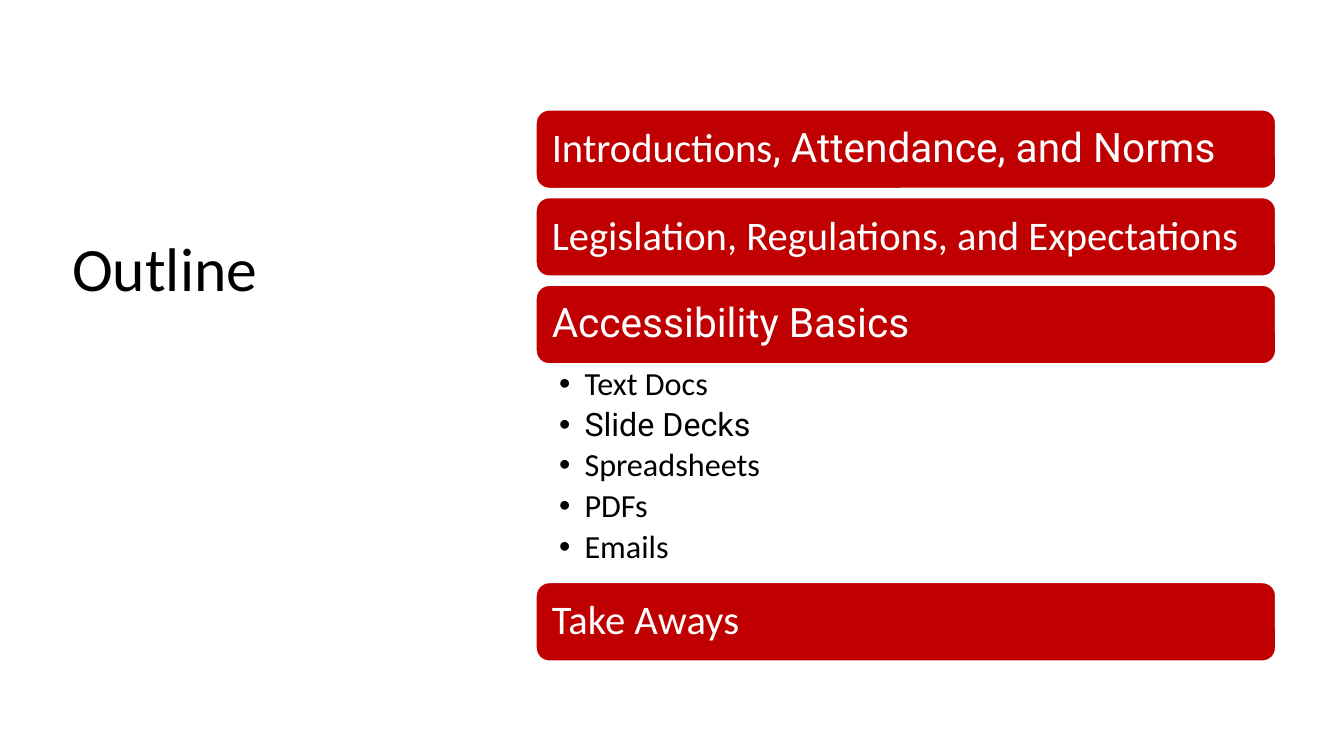
"""Build the workshop outline slide with red topic bars and a bulleted list."""
from lxml import etree
from pptx import Presentation
from pptx.dml.color import RGBColor
from pptx.enum.shapes import MSO_SHAPE
from pptx.enum.text import MSO_ANCHOR, MSO_AUTO_SIZE, PP_ALIGN
from pptx.oxml.ns import qn
from pptx.util import Cm, Pt

ROUNDED = MSO_SHAPE.ROUNDED_RECTANGLE
MIDDLE, TOP = MSO_ANCHOR.MIDDLE, MSO_ANCHOR.TOP
NO_FIT = MSO_AUTO_SIZE.NONE
LEFT = PP_ALIGN.LEFT
RED = RGBColor(0xC0, 0x00, 0x00)
WHITE = RGBColor(0xFF, 0xFF, 0xFF)
BLACK = RGBColor(0x00, 0x00, 0x00)

BAR_LEFT, BAR_TOP, BAR_WIDTH, BAR_HEIGHT = 13.51, 2.77, 18.64, 1.98
BAR_STEP = 2.21
LIST_HEIGHT = 5.51
LIST_TOP = BAR_TOP + 2 * BAR_STEP + BAR_HEIGHT


def write(sp, paragraphs, size, color, anchor=MIDDLE, margins=(0.25, 0.13), after=0, bullet=False):
    tf = sp.text_frame
    tf.word_wrap = True
    tf.auto_size = NO_FIT
    tf.vertical_anchor = anchor
    tf.margin_left = tf.margin_right = Cm(margins[0])
    tf.margin_top = tf.margin_bottom = Cm(margins[1])
    for i, runs in enumerate(paragraphs):
        p = tf.add_paragraph() if i else tf.paragraphs[0]
        p.alignment = LEFT
        p.line_spacing = 0.9
        p.space_before = Pt(0)
        p.space_after = Pt(after)
        if bullet:
            p.level = 1
            pPr = p._p.get_or_add_pPr()
            pPr.set("marL", str(Cm(0.64)))
            pPr.set("indent", str(Cm(-0.64)))
            etree.SubElement(pPr, qn("a:buFont")).set("typeface", "Arial")
            etree.SubElement(pPr, qn("a:buChar")).set("char", "•")
        for text, font in runs:
            r = p.add_run()
            r.text = text
            r.font.name = font
            r.font.size = Pt(size)
            r.font.color.rgb = color


prs = Presentation()
prs.slide_width, prs.slide_height = Cm(33.87), Cm(19.05)
s = prs.slides.add_slide(prs.slide_layouts[1])
title, body = s.placeholders[0], s.placeholders[1]

title.left, title.top, title.width, title.height = Cm(1.57), Cm(2.13), Cm(10.03), Cm(9.42)
write(title, [[("Outline", "Calibri")]], 44, BLACK)

topics = [
    [("Introductions", "Calibri"), (", Attendance, and Norms", "Roboto")],
    [("Legislation, Regulations, and Expectations", "Calibri")],
    [("Accessibility Basics", "Roboto")],
    [("Take Aways", "Calibri")],
]
tops = [BAR_TOP + i * BAR_STEP for i in range(3)] + [LIST_TOP + LIST_HEIGHT]
for topic, top in zip(topics, tops):
    sp = s.shapes.add_shape(ROUNDED, Cm(BAR_LEFT), Cm(top), Cm(BAR_WIDTH), Cm(BAR_HEIGHT))
    sp.shadow.inherit = False
    sp.fill.solid()
    sp.fill.fore_color.rgb = RED
    sp.line.color.rgb = WHITE
    sp.line.width = Pt(1)
    write(sp, [topic], 29, WHITE, margins=(0.3, 0.3))

body.left, body.top, body.width, body.height = Cm(BAR_LEFT), Cm(LIST_TOP), Cm(BAR_WIDTH), Cm(LIST_HEIGHT)
formats = [
    [("Text Docs", "Calibri")],
    [("Slide Decks", "Roboto")],
    [("Spreadsheets", "Calibri")],
    [("PDFs", "Calibri")],
    [("Emails", "Calibri")],
]
write(body, formats, 23, BLACK, anchor=TOP, margins=(0.58, 0.1), after=4.2, bullet=True)

prs.save("out.pptx")
